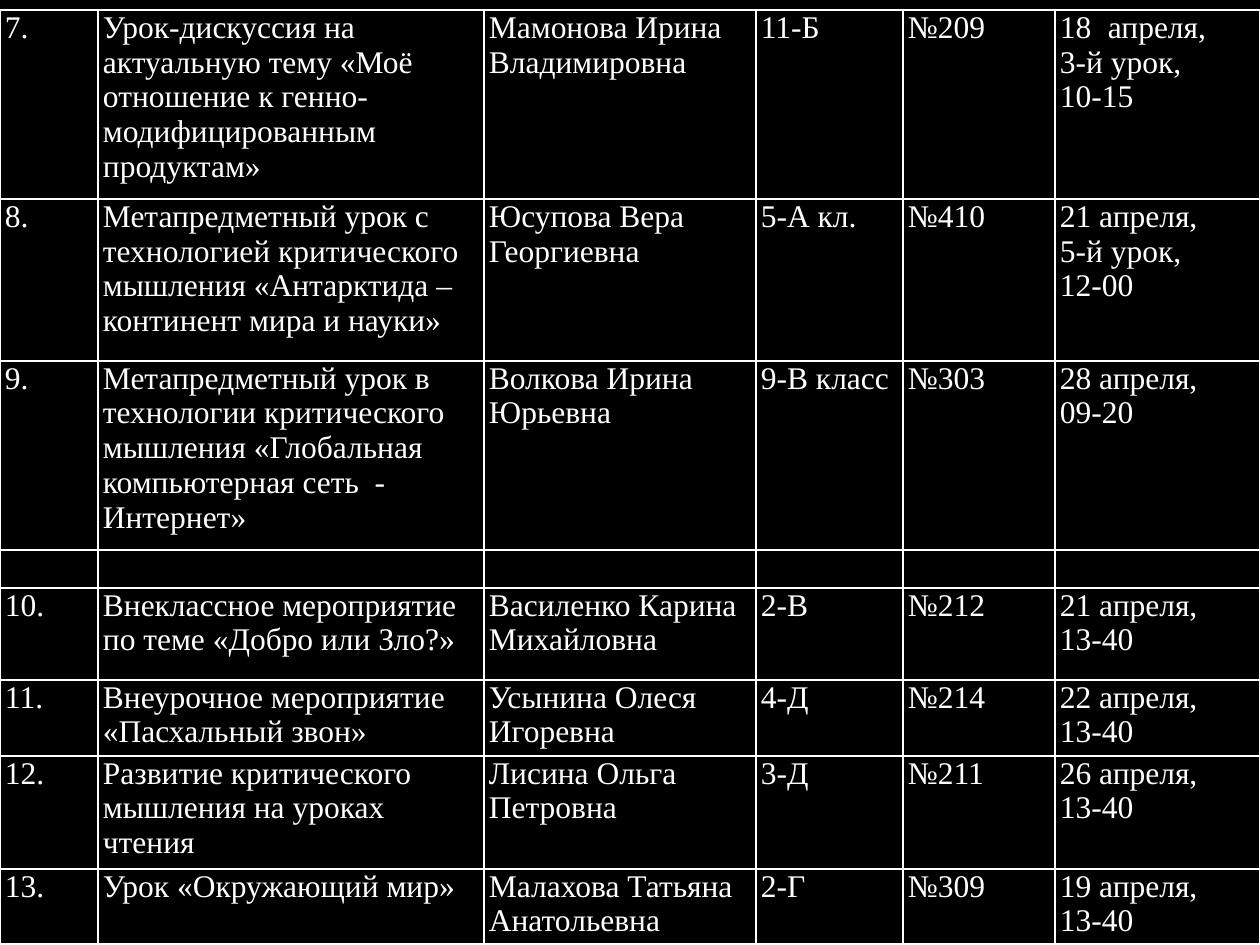
"""Builds a slide with the timetable of open lessons 7 to 13."""
from lxml import etree
from pptx import Presentation, util as u
from pptx.dml.color import RGBColor
from pptx.oxml import ns


def px(n):
    return u.Emu(round(n * 914400 / 126))


def rgb(value):
    return RGBColor.from_string(value)


WHITE = "FFFFFF"
COLS = [98, 386, 272, 147, 152, 205]
HEIGHTS = [189, 162, 189, 38, 92, 76, 113, 75]
ROWS = [
    ["7.", "Урок-дискуссия на актуальную тему «Моё отношение к генно- модифицированным продуктам»",
     "Мамонова Ирина Владимировна", "11-Б", "№209", "апреля,\n3-й урок,\n10-15"],
    ["8.", "Метапредметный урок с технологией критического мышления «Антарктида – континент мира и науки»",
     "Юсупова Вера Георгиевна", "5-А кл.", "№410", "21 апреля,\n5-й урок,\n12-00"],
    ["9.", "Метапредметный урок в технологии критического мышления «Глобальная компьютерная сеть  - Интернет»",
     "Волкова Ирина Юрьевна", "9-В класс", "№303", "28 апреля,\n09-20"],
    [""] * len(COLS),
    ["10.", "Внеклассное мероприятие по теме «Добро или Зло?»",
     "Василенко Карина Михайловна", "2-В", "№212", "21 апреля,\n13-40"],
    ["11.", "Внеурочное мероприятие «Пасхальный звон»",
     "Усынина Олеся Игоревна", "4-Д", "№214", "22 апреля,\n13-40"],
    ["12.", "Развитие критического мышления на уроках чтения",
     "Лисина Ольга Петровна", "3-Д", "№211", "26 апреля,\n13-40"],
    ["13.", "Урок «Окружающий мир»",
     "Малахова Татьяна Анатольевна", "2-Г", "№309", "19 апреля,\n13-40"],
]

prs = Presentation()
prs.slide_width, prs.slide_height = px(1260), px(945)
s = prs.slides.add_slide(prs.slide_layouts[6])
s.background.fill.solid()
s.background.fill.fore_color.rgb = rgb("000000")

table = s.shapes.add_table(len(ROWS), len(COLS), px(0), px(10), px(sum(COLS)), px(sum(HEIGHTS))).table
table.first_row = table.horz_banding = False
for column, width in zip(table.columns, COLS):
    column.width = px(width)

for row, height, values in zip(table.rows, HEIGHTS, ROWS):
    row.height = px(height)
    for cell, value in zip(row.cells, values):
        cell.margin_left = cell.margin_right = px(5)
        cell.margin_top = cell.margin_bottom = 0
        cell.fill.background()
        tcPr = cell._tc.get_or_add_tcPr()
        for i, side in enumerate(["lnL", "lnR", "lnT", "lnB"]):
            ln = etree.Element(ns.qn(f"a:{side}"), w=str(u.Pt(1)))
            fill = etree.SubElement(ln, ns.qn("a:solidFill"))
            etree.SubElement(fill, ns.qn("a:srgbClr"), val=WHITE)
            tcPr.insert(i, ln)
        cell.text_frame.text = value
        for p in cell.text_frame.paragraphs:
            p.font.name = "Times New Roman"
            p.font.size = u.Pt(18)
            p.font.color.rgb = rgb(WHITE)

for i, p in enumerate(table.cell(0, 5).text_frame.paragraphs):
    pPr = p._p.get_or_add_pPr()
    pPr.set("marL", str(px(48)))
    pPr.set("indent", str(-px(48)))
    if i == 0:
        pPr.insert(0, etree.Element(ns.qn("a:buAutoNum"), type="arabicPlain", startAt="18"))

prs.save("out.pptx")
